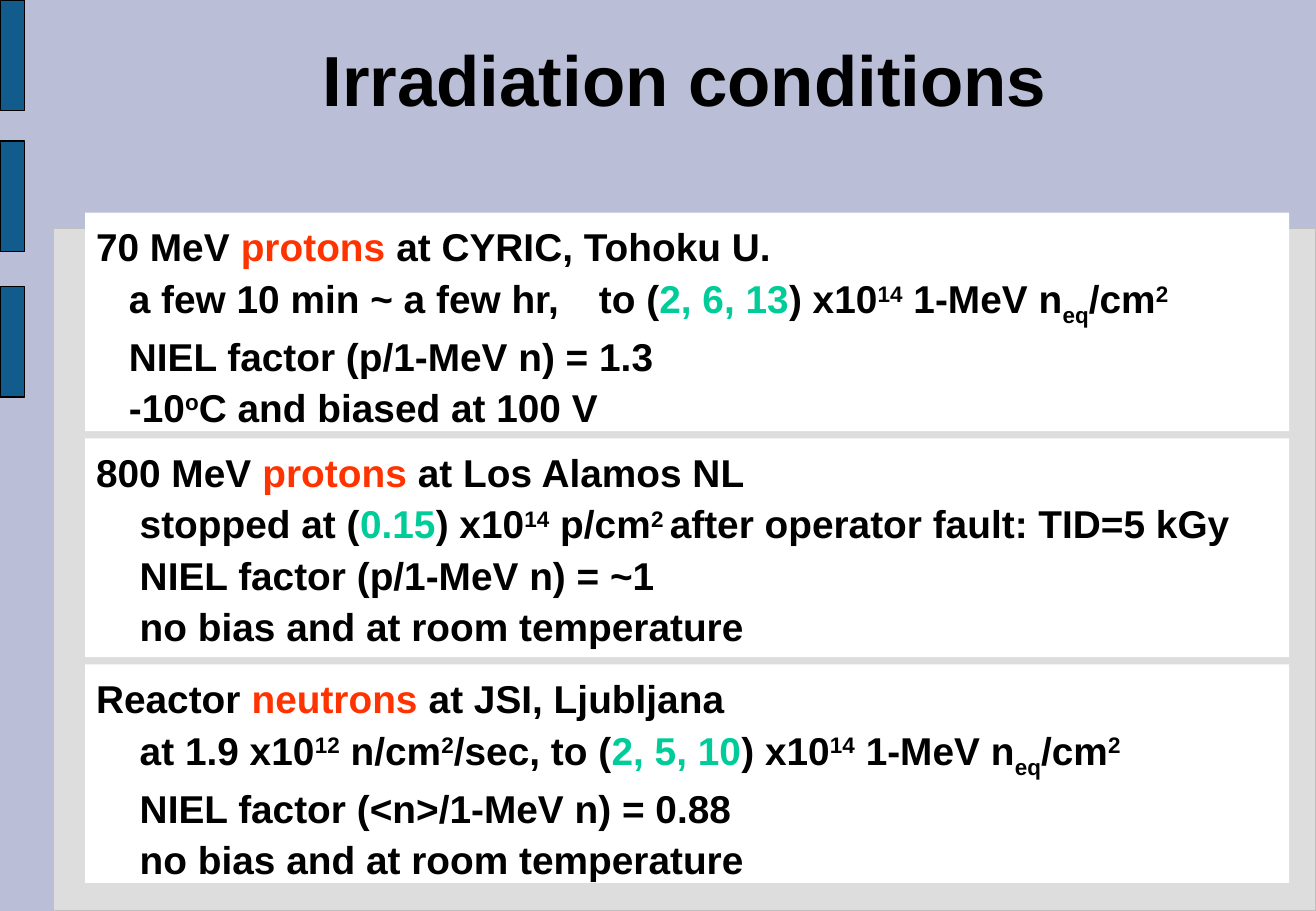
from pptx import Presentation
from pptx.dml.color import RGBColor
from pptx.enum.shapes import MSO_SHAPE
from pptx.enum.text import MSO_ANCHOR, PP_ALIGN
from pptx.util import Inches, Pt

RECTANGLE = MSO_SHAPE.RECTANGLE
TOP, BOTTOM = MSO_ANCHOR.TOP, MSO_ANCHOR.BOTTOM
LEFT, CENTER = PP_ALIGN.LEFT, PP_ALIGN.CENTER

COLORS = {
    "background": "BABED6",
    "backdrop": "DDDDDD",
    "backdrop_line": "C0C0C0",
    "bar": "125C8D",
    "panel": "FFFFFF",
    "text": "000000",
    "particle": "FF3300",
    "dose": "00CC99",
}
BASELINES = {"sup": "30000", "sub": "-25000"}
FONT = "Arial"

BAR_TOPS = [0, 1.16, 2.36]
PANEL_TOP, PANEL_PITCH = 1.75, 1.86

FLUENCE = [(") x10", ""), ("14", "sup"), (" 1-MeV n", ""), ("eq", "sub"),
           ("/cm", ""), ("2", "sup")]
ROOM_TEMPERATURE = [("no bias and at room temperature", "")]

PANELS = [
    (0.27, [
        [("70 MeV ", ""), ("protons", "particle"), (" at CYRIC, Tohoku U.", "")],
        [("a few 10 min ~ a few hr,　to (", ""), ("2, 6, 13", "dose"), *FLUENCE],
        [("NIEL factor (p/1-MeV n) = 1.3", "")],
        [("-10", ""), ("o", "sup"), ("C and biased at 100 V", "")],
    ]),
    (0.36, [
        [("800 MeV ", ""), ("protons", "particle"), (" at Los Alamos NL", "")],
        [("stopped at (", ""), ("0.15", "dose"), (") x10", ""), ("14", "sup"),
         (" p/cm", ""), ("2 ", "sup"), ("after operator fault: TID=5 kGy", "")],
        [("NIEL factor (p/1-MeV n) = ~1", "")],
        ROOM_TEMPERATURE,
    ]),
    (0.36, [
        [("Reactor ", ""), ("neutrons", "particle"), (" at JSI, Ljubljana", "")],
        [("at 1.9 x10", ""), ("12", "sup"), (" n/cm", ""), ("2", "sup"),
         ("/sec, to (", ""), ("2, 5, 10", "dose"), *FLUENCE],
        [("NIEL factor (<n>/1-MeV n) = 0.88", "")],
        ROOM_TEMPERATURE,
    ]),
]


def color(name):
    """Return the named colour."""
    return RGBColor.from_string(COLORS[name])


def add_box(slide, left, top, width, height, fill, line=None):
    """Add a filled rectangle, outlined if a line colour is given."""
    shape = slide.shapes.add_shape(
        RECTANGLE, Inches(left), Inches(top), Inches(width), Inches(height))
    shape.shadow.inherit = False
    shape.fill.solid()
    shape.fill.fore_color.rgb = color(fill)
    if line:
        shape.line.color.rgb = color(line)
        shape.line.width = Pt(0.75)
    else:
        shape.line.fill.background()
    return shape


def set_frame(frame, anchor, side_margin):
    """Set the wrapping, anchor and margins of a text frame."""
    frame.word_wrap = True
    frame.vertical_anchor = anchor
    frame.margin_left = frame.margin_right = Inches(side_margin)
    frame.margin_top = frame.margin_bottom = Inches(0.05)


def format_paragraph(paragraph, size, alignment, spacing):
    """Set the bold font, alignment and line spacing of a paragraph."""
    paragraph.alignment = alignment
    paragraph.line_spacing = spacing
    paragraph.font.name = FONT
    paragraph.font.size = Pt(size)
    paragraph.font.bold = True
    paragraph.font.color.rgb = color("text")


def add_run(paragraph, text, style):
    """Add a run that is plain, coloured, raised or lowered."""
    run = paragraph.add_run()
    run.text = text
    run.font.color.rgb = color(style if style in COLORS else "text")
    if style in BASELINES:
        run.font._element.set("baseline", BASELINES[style])


def add_title(slide, text):
    """Add the slide title."""
    box = slide.shapes.add_textbox(
        Inches(1.01), Inches(0.25), Inches(9.25), Inches(0.79))
    set_frame(box.text_frame, BOTTOM, 0.1)
    paragraph = box.text_frame.paragraphs[0]
    format_paragraph(paragraph, 42, CENTER, 0.83)
    add_run(paragraph, text, "")


def add_panel(slide, top, indent, lines):
    """Add a white panel with a heading and indented lines."""
    frame = add_box(slide, 0.7, top, 9.91, 1.8, "panel").text_frame
    set_frame(frame, TOP, 0.09)
    for index, runs in enumerate(lines):
        paragraph = frame.add_paragraph() if index else frame.paragraphs[0]
        format_paragraph(paragraph, 23, LEFT, 1.1)
        if index:
            paragraph._p.get_or_add_pPr().set("marL", str(Inches(indent)))
        for text, style in runs:
            add_run(paragraph, text, style)


def main():
    """Build and save the slide."""
    presentation = Presentation()
    presentation.slide_width = Inches(10.83)
    presentation.slide_height = Inches(7.5)
    slide = presentation.slides.add_slide(presentation.slide_layouts[6])
    slide.background.fill.solid()
    slide.background.fill.fore_color.rgb = color("background")

    add_box(slide, 0.44, 1.88, 10.39, 5.62, "backdrop", "backdrop_line")
    for top in BAR_TOPS:
        add_box(slide, 0, top, 0.2, 0.91, "bar", "text")
    add_title(slide, "Irradiation conditions")
    for index, (indent, lines) in enumerate(PANELS):
        add_panel(slide, PANEL_TOP + index * PANEL_PITCH, indent, lines)
    presentation.save("out.pptx")


if __name__ == "__main__":
    main()
